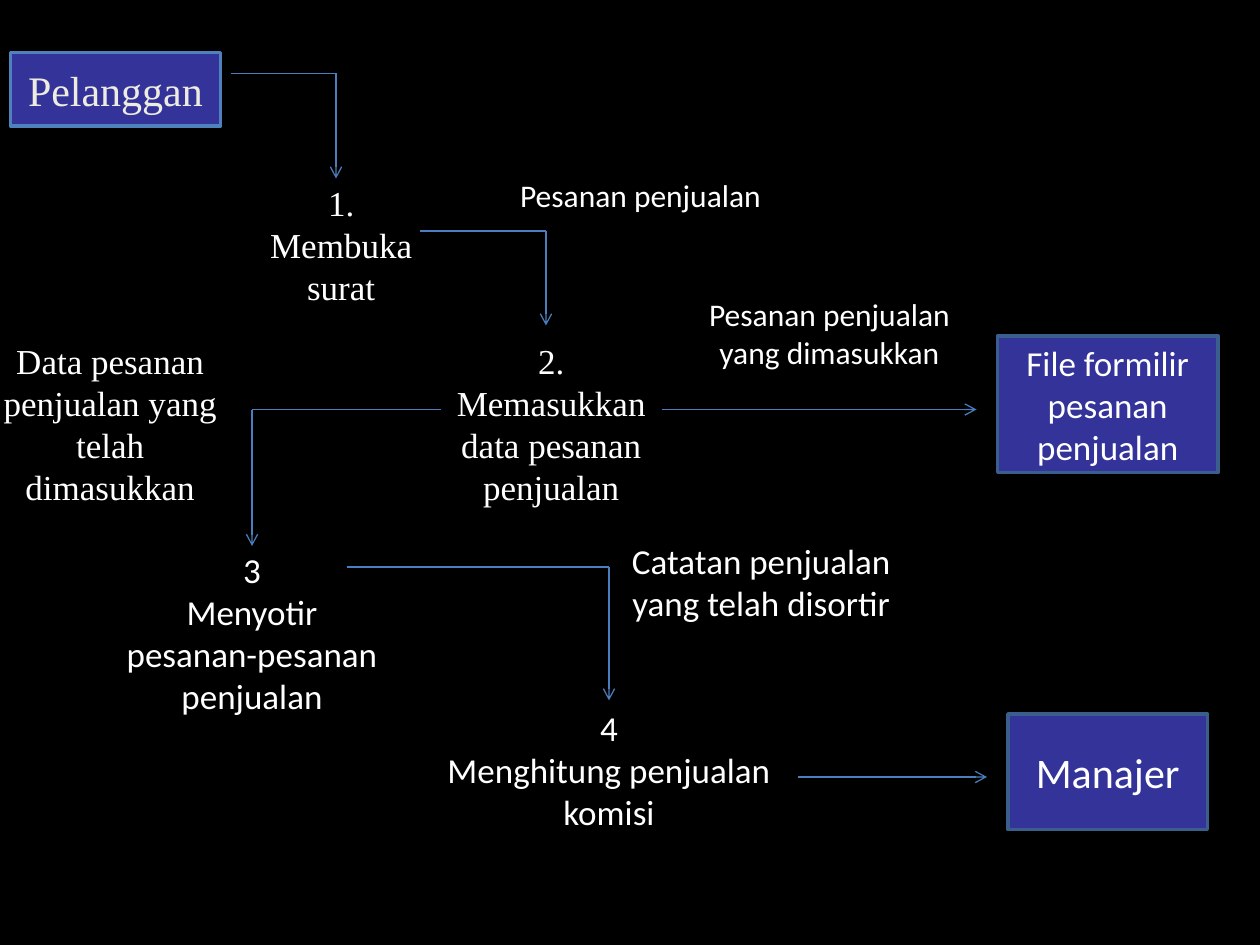
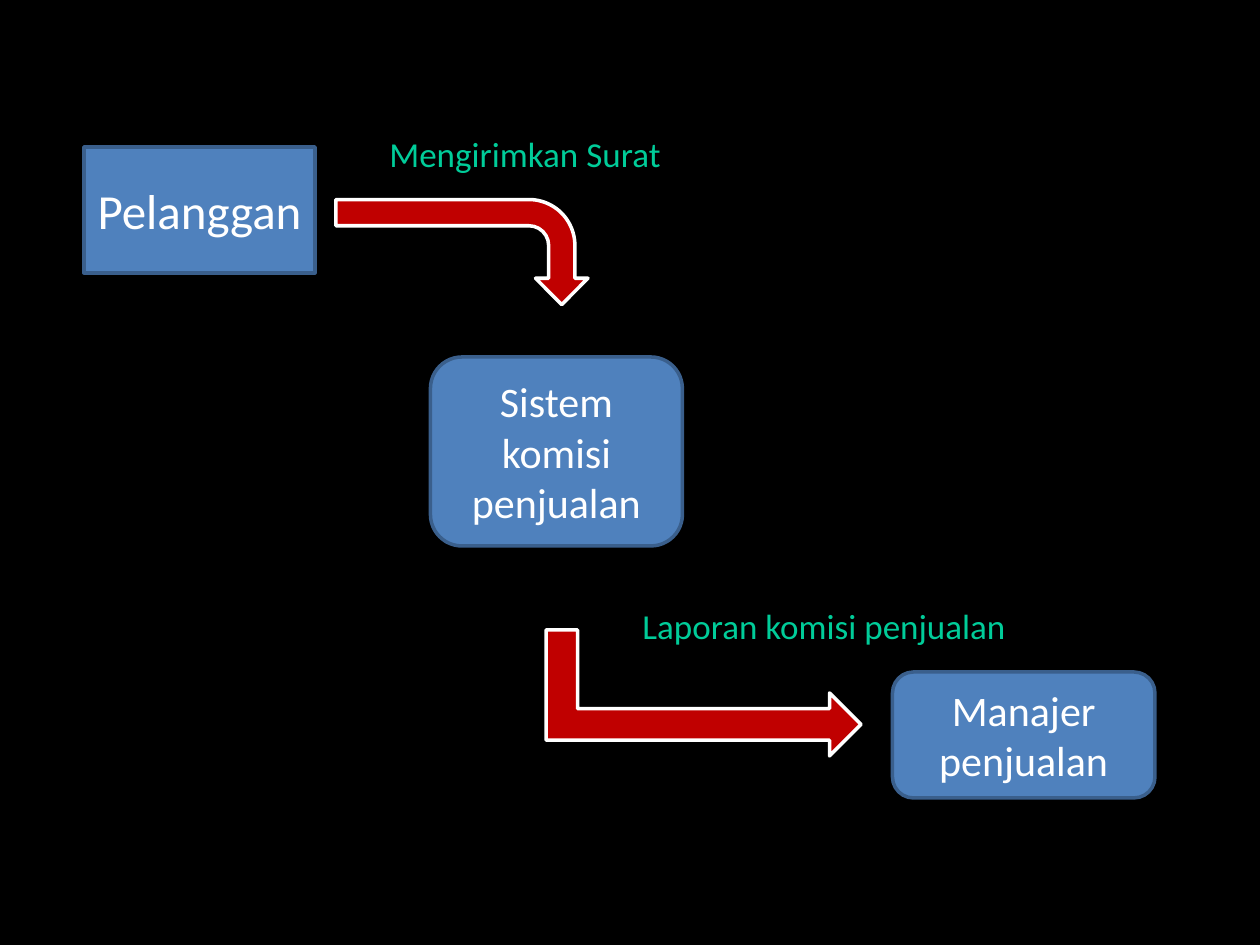
import dataclasses
import itertools

import pptx
import pptx.dml.color
import pptx.enum.shapes
import pptx.enum.text
import pptx.oxml
import pptx.oxml.ns
import pptx.util

EMU_PER_PX = 7620  # 120 px to the inch
SHAPES = pptx.enum.shapes.MSO_SHAPE
ALIGN = pptx.enum.text.PP_ALIGN


@dataclasses.dataclass(frozen=True)
class Theme:
    background: str = "000000"
    text: str = "FFFFFF"
    cream: str = "EEECE1"
    green: str = "00CC99"
    indigo: str = "333399"
    blue: str = "4F81BD"
    border: str = "3A5F8C"
    flow: str = "4B7EBC"
    red: str = "C00000"
    sans: str = "Calibri"
    serif: str = "Times New Roman"
    note_size: int = 18
    body_size: int = 20
    box_size: int = 24
    large_size: int = 28
    border_width: float = 2
    flow_width: float = 0.75


THEME = Theme()


def px(*lengths):
    return [pptx.util.Emu(length * EMU_PER_PX) for length in lengths]


def rgb(value):
    return pptx.dml.color.RGBColor.from_string(value)


def apply_format(target, values):
    for name, value in values.items():
        setattr(target, name, value)


def paint(fill, color):
    fill.solid()
    fill.fore_color.rgb = rgb(color)


def write_text(shape, text, size, font=THEME.sans, color=THEME.text,
               align=ALIGN.CENTER, **frame_format):
    """Fill the shape with one paragraph for each line of text."""
    frame = shape.text_frame
    frame.text = text
    apply_format(frame, {"word_wrap": True, **frame_format})
    for paragraph in frame.paragraphs:
        paragraph.alignment = align
        apply_format(paragraph.font, {"size": pptx.util.Pt(size), "name": font})
        paragraph.font.color.rgb = rgb(color)


def add_label(slide, place, text, size=THEME.body_size, **style):
    label = slide.shapes.add_textbox(*px(*place))
    write_text(label, text, size, **style,
               auto_size=pptx.enum.text.MSO_AUTO_SIZE.SHAPE_TO_FIT_TEXT)


def add_figure(slide, kind, place, fill, border):
    shape = slide.shapes.add_shape(kind, *px(*place))
    shape.shadow.inherit = False
    paint(shape.fill, fill)
    paint(shape.line.fill, border)
    shape.line.width = pptx.util.Pt(THEME.border_width)
    return shape


def add_box(slide, place, text, size=THEME.box_size, kind=SHAPES.RECTANGLE,
            fill=THEME.blue, border=THEME.border, **style):
    box = add_figure(slide, kind, place, fill, border)
    write_text(box, text, size, **style,
               vertical_anchor=pptx.enum.text.MSO_ANCHOR.MIDDLE)


def add_block_arrow(slide, kind, place):
    """Place is the frame before the quarter turn."""
    arrow = add_figure(slide, kind, place, THEME.red, THEME.text)
    arrow.rotation = 90


def add_flow(slide, *points):
    """Join the points with straight lines, with an arrowhead at the last."""
    for start, end in itertools.pairwise(points):
        line = slide.shapes.add_connector(
            pptx.enum.shapes.MSO_CONNECTOR.STRAIGHT, *px(*start, *end))
        paint(line.line.fill, THEME.flow)
        line.line.width = pptx.util.Pt(THEME.flow_width)
        properties = line._element.spPr
        properties.append(pptx.oxml.parse_xml(
            f'<a:effectLst {pptx.oxml.ns.nsdecls("a")}/>'))
    properties.find(pptx.oxml.ns.qn("a:ln")).append(pptx.oxml.parse_xml(
        f'<a:tailEnd {pptx.oxml.ns.nsdecls("a")} type="arrow"/>'))


def add_slide(presentation):
    slide = presentation.slides.add_slide(presentation.slide_layouts[6])
    paint(slide.background.fill, THEME.background)
    return slide


def build_process_flow(presentation):
    slide = add_slide(presentation)
    add_box(slide, (10, 50, 200, 70), "Pelanggan", fill=THEME.indigo,
            border=THEME.blue, font=THEME.serif, color=THEME.cream)
    add_box(slide, (950, 320, 210, 130), "File formilir pesanan penjualan",
            THEME.body_size, fill=THEME.indigo)
    add_box(slide, (960, 680, 190, 110), "Manajer", fill=THEME.indigo)

    serif_labels = [
        ((240, 167, 170, 133), "1.\nMembuka surat"),
        ((400, 317, 250, 174), "2.\nMemasukkan data pesanan penjualan"),
        ((-10, 317, 230, 174), "Data pesanan penjualan yang telah dimasukkan"),
    ]
    for place, text in serif_labels:
        add_label(slide, place, text, font=THEME.serif)

    sans_labels = [
        ((480, 162, 260, 48), "Pesanan penjualan", THEME.note_size),
        ((660, 275, 260, 85), "Pesanan penjualan yang dimasukkan", THEME.note_size),
        ((100, 516, 280, 174), "3\nMenyotir pesanan-pesanan penjualan", THEME.body_size),
        ((560, 508, 330, 92), "Catatan penjualan yang telah disortir", THEME.body_size),
        ((410, 667, 340, 133), "4\nMenghitung penjualan komisi", THEME.body_size),
    ]
    for place, text, size in sans_labels:
        add_label(slide, place, text, size)

    flows = [
        [(220, 70), (320, 70), (320, 170)],
        [(400, 220), (520, 220), (520, 310)],
        [(630, 390), (930, 390)],
        [(420, 390), (240, 390), (240, 520)],
        [(330, 540), (580, 540), (580, 667)],
        [(760, 740), (940, 740)],
    ]
    for points in flows:
        add_flow(slide, *points)


def build_context_diagram(presentation):
    slide = add_slide(presentation)
    add_box(slide, (80, 140, 220, 120), "Pelanggan", THEME.large_size)
    add_label(slide, (310, 120, 380, 53), "Mengirimkan Surat", color=THEME.green)
    add_block_arrow(slide, SHAPES.BENT_ARROW, (390, 120, 100, 240))
    add_box(slide, (410, 340, 240, 180), "Sistem komisi penjualan",
            kind=SHAPES.ROUNDED_RECTANGLE)
    add_block_arrow(slide, SHAPES.BENT_UP_ARROW, (610, 510, 120, 300))
    add_label(slide, (600, 570, 450, 53), "Laporan komisi penjualan",
              color=THEME.green, align=ALIGN.LEFT)
    add_box(slide, (850, 640, 250, 120), "Manajer penjualan",
            kind=SHAPES.ROUNDED_RECTANGLE)


def main():
    presentation = pptx.Presentation()
    width, height = px(1200, 900)
    apply_format(presentation, {"slide_width": width, "slide_height": height})
    build_process_flow(presentation)
    build_context_diagram(presentation)
    presentation.save("out.pptx")


if __name__ == "__main__":
    main()
